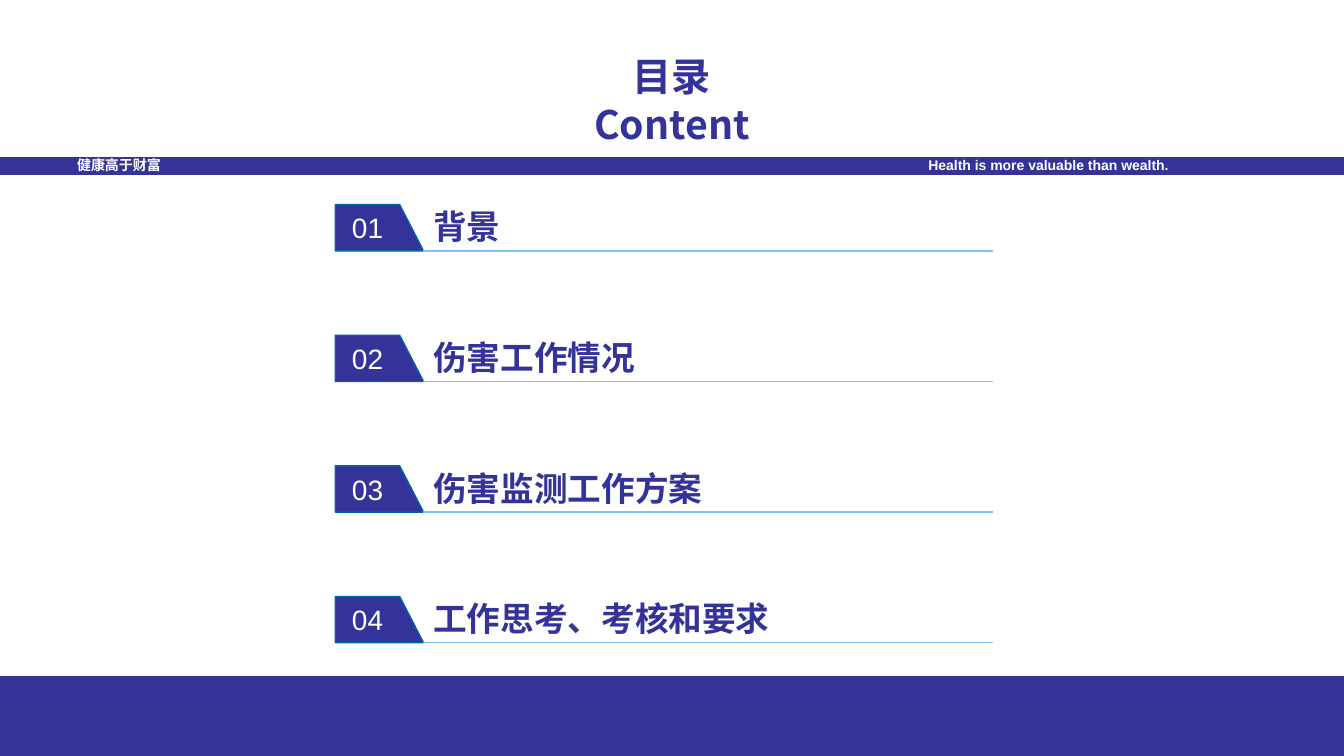
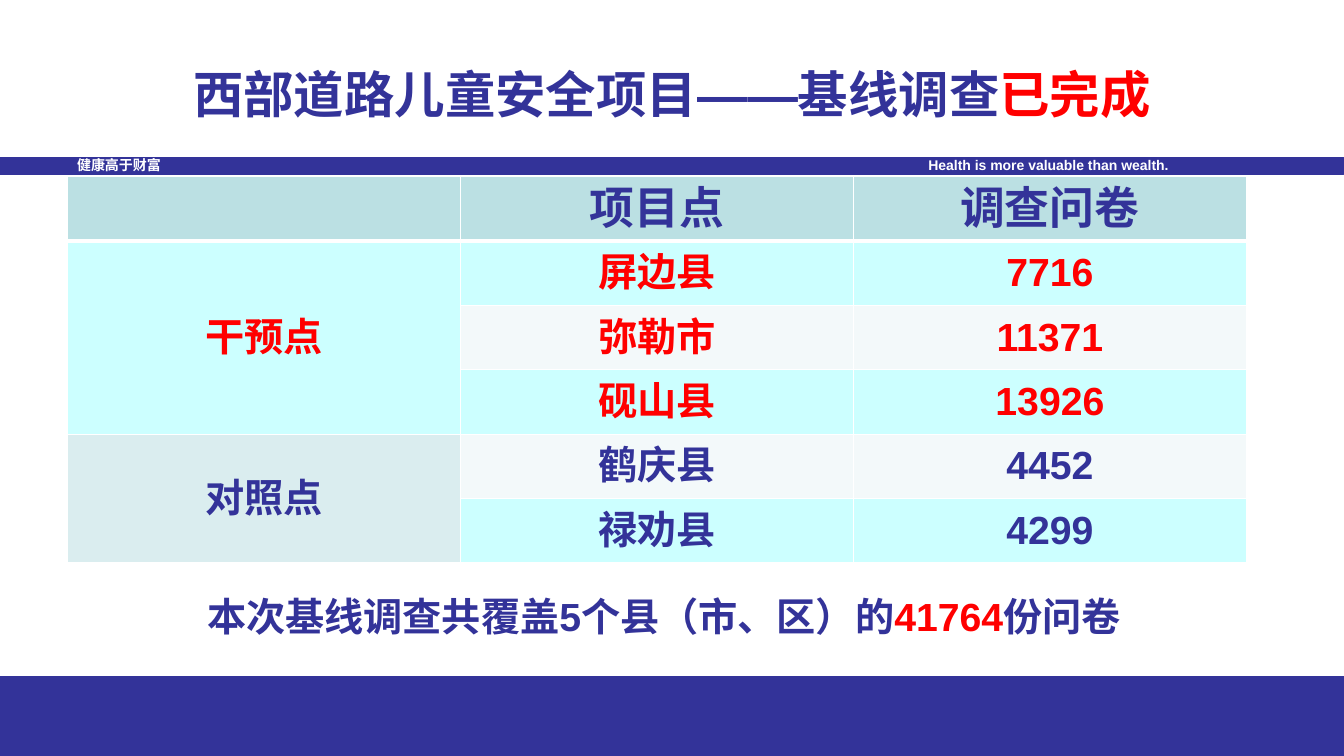
from dataclasses import dataclass

from lxml.etree import SubElement
from pptx import Presentation
from pptx.dml.color import RGBColor
from pptx.enum.shapes import MSO_CONNECTOR, MSO_SHAPE
from pptx.enum.text import MSO_ANCHOR, MSO_AUTO_SIZE, PP_ALIGN
from pptx.oxml import parse_xml
from pptx.oxml.ns import nsdecls, qn
from pptx.util import Pt


@dataclass(frozen=True)
class Theme:
    # Colours
    navy: str = "333399"
    white: str = "FFFFFF"
    red: str = "FF0000"
    tab_edge: str = "0061AD"
    rule: str = "78C4FF"
    header_fill: str = "BBE0E3"
    group_fill: str = "DAEDEF"
    cyan_fill: str = "CCFFFF"
    pale_fill: str = "F3F9FA"
    # Fonts and type sizes
    font: str = "Arial"
    chinese_font: str = "Noto Sans CJK SC"
    strip_size: int = 10
    number_size: int = 20
    item_size: int = 24
    body_size: int = 28
    header_size: int = 32
    title_size: int = 36


THEME = Theme()
WIDTH, HEIGHT = 960, 540
STRIP_BOX = (0, 112.5, WIDTH, 12.2)
FOOTER_BOX = (0, 483, WIDTH, 57)


def color(value):
    return RGBColor.from_string(value)


def points(box):
    return [Pt(value) for value in box]


def set_values(target, values):
    for name, value in values.items():
        setattr(target, name, value)


def write_text(frame, paragraphs, size, text_color=THEME.navy, font=THEME.font,
               bold=True, align=PP_ALIGN.CENTER, spacing=None):
    """Each paragraph is a list of (text, colour) runs; no colour means text_color."""
    for index, runs in enumerate(paragraphs):
        paragraph = frame.paragraphs[0] if index == 0 else frame.add_paragraph()
        set_values(paragraph, {"alignment": align, "space_before": Pt(0)})
        if spacing:
            paragraph.line_spacing = Pt(spacing)
        for text, run_color in runs:
            run = paragraph.add_run()
            run.text = text
            set_values(run.font, {"name": font, "size": Pt(size), "bold": bold})
            run.font.color.rgb = color(run_color or text_color)
            SubElement(run.font._element, qn("a:ea"), typeface=font)


def set_frame(frame, anchor=MSO_ANCHOR.MIDDLE, **margins):
    values = {"word_wrap": True, "auto_size": MSO_AUTO_SIZE.NONE,
              "vertical_anchor": anchor, "margin_top": 0, "margin_bottom": 0}
    set_values(frame, values | margins)


def add_text(slide, box, paragraphs, size, anchor=MSO_ANCHOR.MIDDLE, **style):
    frame = slide.shapes.add_textbox(*points(box)).text_frame
    set_frame(frame, anchor)
    write_text(frame, paragraphs, size, **style)


def paint(shape, fill, line, width):
    shape.shadow.inherit = False
    shape.fill.solid()
    shape.fill.fore_color.rgb = color(fill)
    shape.line.color.rgb = color(line)
    shape.line.width = Pt(width)


# Shared frame: strip with slogans and footer band
def add_frame(slide):
    for box in (STRIP_BOX, FOOTER_BOX):
        band = slide.shapes.add_shape(MSO_SHAPE.RECTANGLE, *points(box))
        paint(band, THEME.navy, THEME.navy, 0.75)
    slogans = ((48, 136, "健康高于财富"), (656, 256, "Health is more valuable than wealth."))
    for left, width, slogan in slogans:
        add_text(slide, (left, 108, width, 19.4), [[(slogan, None)]], THEME.strip_size,
                 text_color=THEME.white, align=PP_ALIGN.LEFT)


def add_title(slide, box, paragraphs, size, anchor=MSO_ANCHOR.MIDDLE, **style):
    title = slide.shapes.title
    set_values(title, dict(zip(("left", "top", "width", "height"), points(box))))
    set_frame(title.text_frame, anchor)
    write_text(title.text_frame, paragraphs, size, **style)


def new_slide(presentation):
    slide = presentation.slides.add_slide(presentation.slide_layouts[5])
    add_frame(slide)
    return slide


# One contents entry: numbered tab, heading and rule
def add_entry(slide, box, number, heading):
    left, top, width, height = box
    tab_width, slant = 63, 17
    right, bottom = left + tab_width, top + height
    builder = slide.shapes.build_freeform(Pt(left), Pt(top))
    corners = ((right - slant, top), (right, bottom), (left, bottom))
    builder.add_line_segments([(Pt(x), Pt(y)) for x, y in corners], close=True)
    tab = builder.convert_to_shape()
    paint(tab, THEME.navy, THEME.tab_edge, 1)
    set_frame(tab.text_frame, margin_left=0, margin_right=Pt(slant))
    write_text(tab.text_frame, [[(f"{number:02}", None)]], THEME.number_size,
               text_color=THEME.white, bold=False)

    rule = slide.shapes.add_connector(
        MSO_CONNECTOR.STRAIGHT, *points((right, bottom, left + width, bottom)))
    rule.line.color.rgb = color(THEME.rule)
    rule.line.width = Pt(1)
    SubElement(rule._element.spPr, qn("a:effectLst"))

    add_text(slide, (right, top - 9, width - tab_width, height + 6), [[(heading, None)]],
             THEME.item_size, MSO_ANCHOR.BOTTOM, font=THEME.chinese_font,
             align=PP_ALIGN.LEFT)


def build_contents(presentation):
    slide = new_slide(presentation)
    add_title(slide, (320, 37, 320, 68), [[("目录", None)], [("Content", None)]],
              THEME.body_size, MSO_ANCHOR.TOP, font=THEME.chinese_font, spacing=34)
    headings = ("背景", "伤害工作情况", "伤害监测工作方案", "工作思考、考核和要求")
    left, top, width, height, pitch = 239.5, 146.2, 469.5, 33, 93.3
    for index, heading in enumerate(headings):
        add_entry(slide, (left, top + index * pitch, width, height), index + 1, heading)


def set_borders(cell, bottom_width):
    properties = cell._tc.get_or_add_tcPr()
    widths = {"lnL": 1, "lnR": 1, "lnT": 1, "lnB": bottom_width}
    for index, (side, width) in enumerate(widths.items()):
        properties.insert(index, parse_xml(
            f'<a:{side} {nsdecls("a")} w="{Pt(width)}"><a:solidFill>'
            f'<a:srgbClr val="{THEME.white}"/></a:solidFill></a:{side}>'))


def fill_cell(cell, text, fill, size, text_color, bottom_width=1):
    cell.vertical_anchor = MSO_ANCHOR.MIDDLE
    cell.fill.solid()
    cell.fill.fore_color.rgb = color(fill)
    set_borders(cell, bottom_width)
    if text:
        write_text(cell.text_frame, [[(text, None)]], size, text_color)


# Survey table: groups of counties share a merged first cell
def add_survey_table(slide, box, header, groups):
    row_count = 1 + sum(len(counties) for *_, counties in groups)
    table = slide.shapes.add_table(row_count, len(header), *points(box)).table
    table.horz_banding = False
    for column, text in enumerate(header):
        fill_cell(table.cell(0, column), text, THEME.header_fill,
                  THEME.header_size, THEME.navy, 3)
    row = 1
    for name, group_fill, text_color, counties in groups:
        first = row
        for county, count in counties:
            row_fill = THEME.cyan_fill if row % 2 else THEME.pale_fill
            texts = (name if row == first else "", county, str(count))
            for column, text in enumerate(texts):
                fill = row_fill if column else group_fill
                fill_cell(table.cell(row, column), text, fill, THEME.body_size, text_color)
            row += 1
        table.cell(first, 0).merge(table.cell(row - 1, 0))


def build_survey(presentation):
    slide = new_slide(presentation)
    add_title(slide, (48, 21.6, 864, 90),
              [[("西部道路儿童安全项目——基线调查", None), ("已完成", THEME.red)]],
              THEME.title_size)
    groups = (
        ("干预点", THEME.cyan_fill, THEME.red,
         (("屏边县", 7716), ("弥勒市", 11371), ("砚山县", 13926))),
        ("对照点", THEME.group_fill, THEME.navy, (("鹤庆县", 4452), ("禄劝县", 4299))),
    )
    add_survey_table(slide, (48.2, 126.2, 842.1, 276), ("", "项目点", "调查问卷"), groups)
    # Total under the table
    add_text(slide, (117.4, 419, 713.5, 42),
             [[("本次基线调查共覆盖5个县（市、区）的", None), ("41764", THEME.red),
               ("份问卷", None)]], THEME.body_size)


def main():
    presentation = Presentation()
    set_values(presentation, {"slide_width": Pt(WIDTH), "slide_height": Pt(HEIGHT)})
    build_contents(presentation)
    build_survey(presentation)
    presentation.save("out.pptx")


if __name__ == "__main__":
    main()
